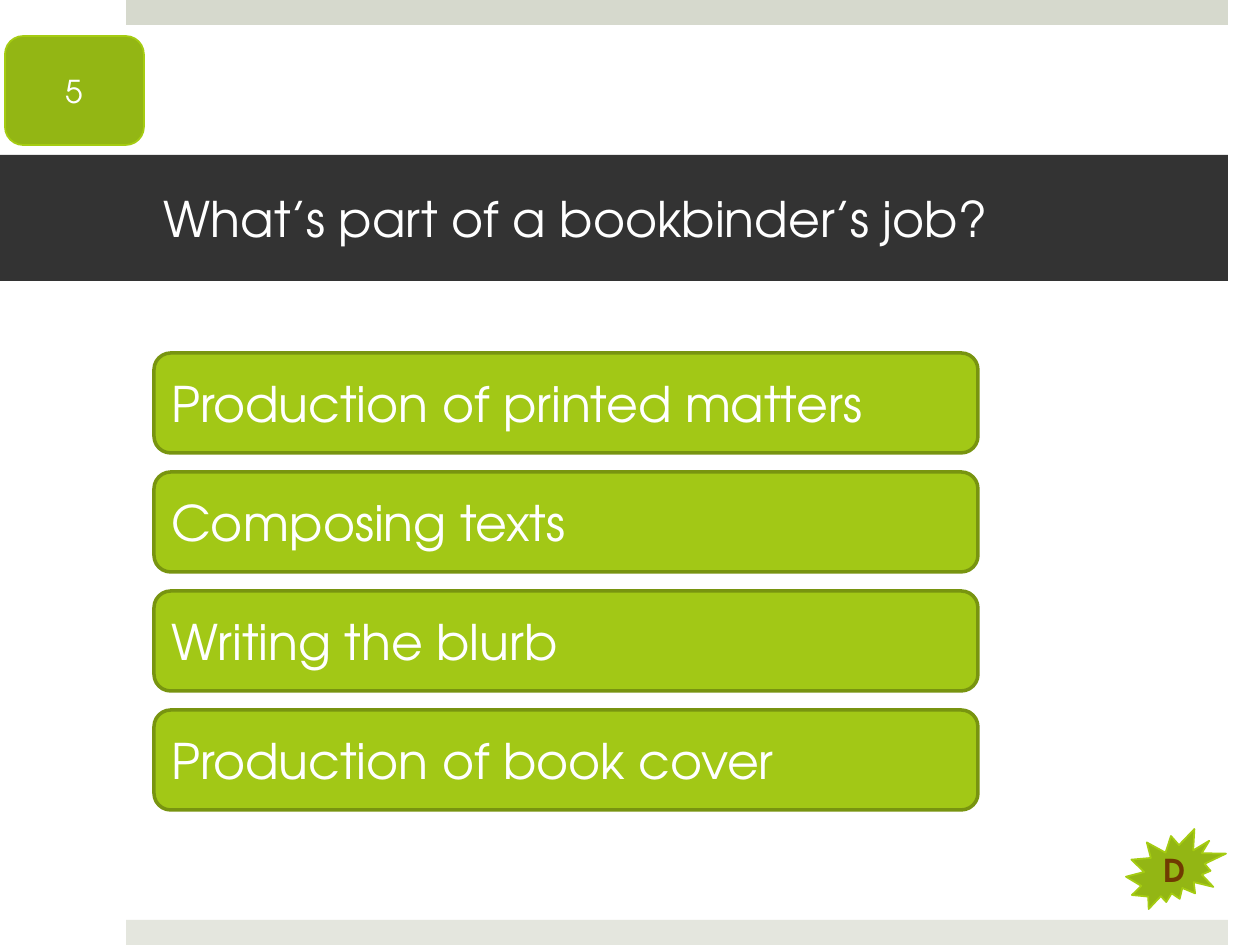
from pptx import Presentation
from pptx.dml.color import RGBColor
from pptx.enum.shapes import MSO_SHAPE
from pptx.enum.text import MSO_ANCHOR, PP_ALIGN
from pptx.util import Emu, Pt

RECT = MSO_SHAPE.RECTANGLE
ROUND = MSO_SHAPE.ROUNDED_RECTANGLE
BURST = MSO_SHAPE.EXPLOSION2
MIDDLE = MSO_ANCHOR.MIDDLE
LEFT, CENTER = PP_ALIGN.LEFT, PP_ALIGN.CENTER

SCALE = 914400 / 126  # EMU per px
FONT = "TeX Gyre Adventor"
COLORS = {
    "top": "D6D9CD",
    "foot": "E4E6DE",
    "dark": "333333",
    "lime": "A2C816",
    "edge": "789410",
    "green": "93B614",
    "rim": "A5CC12",
    "white": "FFFFFF",
    "brown": "703B01",
}
ANSWERS = [
    "Production of printed matters",
    "Composing texts",
    "Writing the blurb",
    "Production of book cover",
]


def px(count):
    return Emu(round(count * SCALE))


def color(name):
    return RGBColor.from_string(COLORS[name])


def add_box(slide, kind, box, fill, line=None, width=1):
    shape = slide.shapes.add_shape(kind, *map(px, box))
    shape.shadow.inherit = False
    shape.fill.solid()
    shape.fill.fore_color.rgb = color(fill)
    if line:
        shape.line.color.rgb = color(line)
        shape.line.width = Pt(width)
    else:
        shape.line.fill.background()
    return shape


def set_text(shape, text, size, align=LEFT, ink="white", bold=False):
    frame = shape.text_frame
    frame.text = text
    frame.word_wrap = True
    frame.vertical_anchor = MIDDLE
    para = frame.paragraphs[0]
    para.alignment = align
    font = para.runs[0].font
    font.name, font.size, font.bold = FONT, Pt(size), bold
    font.color.rgb = color(ink)


def add_bars(slide, box):
    """Pale bars along the top and bottom of the box."""
    left, top, width, height = box
    thick = 25
    add_box(slide, RECT, (left, top, width, thick), "top")
    add_box(slide, RECT, (left, top + height - thick, width, thick), "foot")


def add_title(slide, box, text):
    band = add_box(slide, RECT, box, "dark")
    set_text(band, text, 28)
    band.text_frame.margin_left = px(164)
    band.text_frame.margin_right = px(38)


def add_answers(slide, box, answers):
    """Equal buttons stacked down the box."""
    left, top, width, height = box
    gap = 19
    tall = (height - gap * (len(answers) - 1)) / len(answers)
    for row, answer in enumerate(answers):
        place = (left, top + row * (tall + gap), width, tall)
        set_text(add_box(slide, ROUND, place, "lime", "edge", 2), answer, 28)


def add_badge(slide, kind, box, text, ink="white", bold=False):
    badge = add_box(slide, kind, box, "green", "rim")
    set_text(badge, text, 18, CENTER, ink, bold)


def main():
    deck = Presentation()
    deck.slide_width, deck.slide_height = px(1260), px(945)
    slide = deck.slides.add_slide(deck.slide_layouts[6])

    # Frame and question
    add_bars(slide, (126, 0, 1102, 945))
    add_title(slide, (0, 155, 1228, 126), "What’s part of a bookbinder’s job?")

    # Choices
    add_answers(slide, (154, 353, 824, 457), ANSWERS)

    # Question number and solution
    add_badge(slide, ROUND, (5, 36, 139, 109), "5")
    add_badge(slide, BURST, (1126, 829, 100, 80), "D", "brown", True)

    deck.save("out.pptx")


if __name__ == "__main__":
    main()
